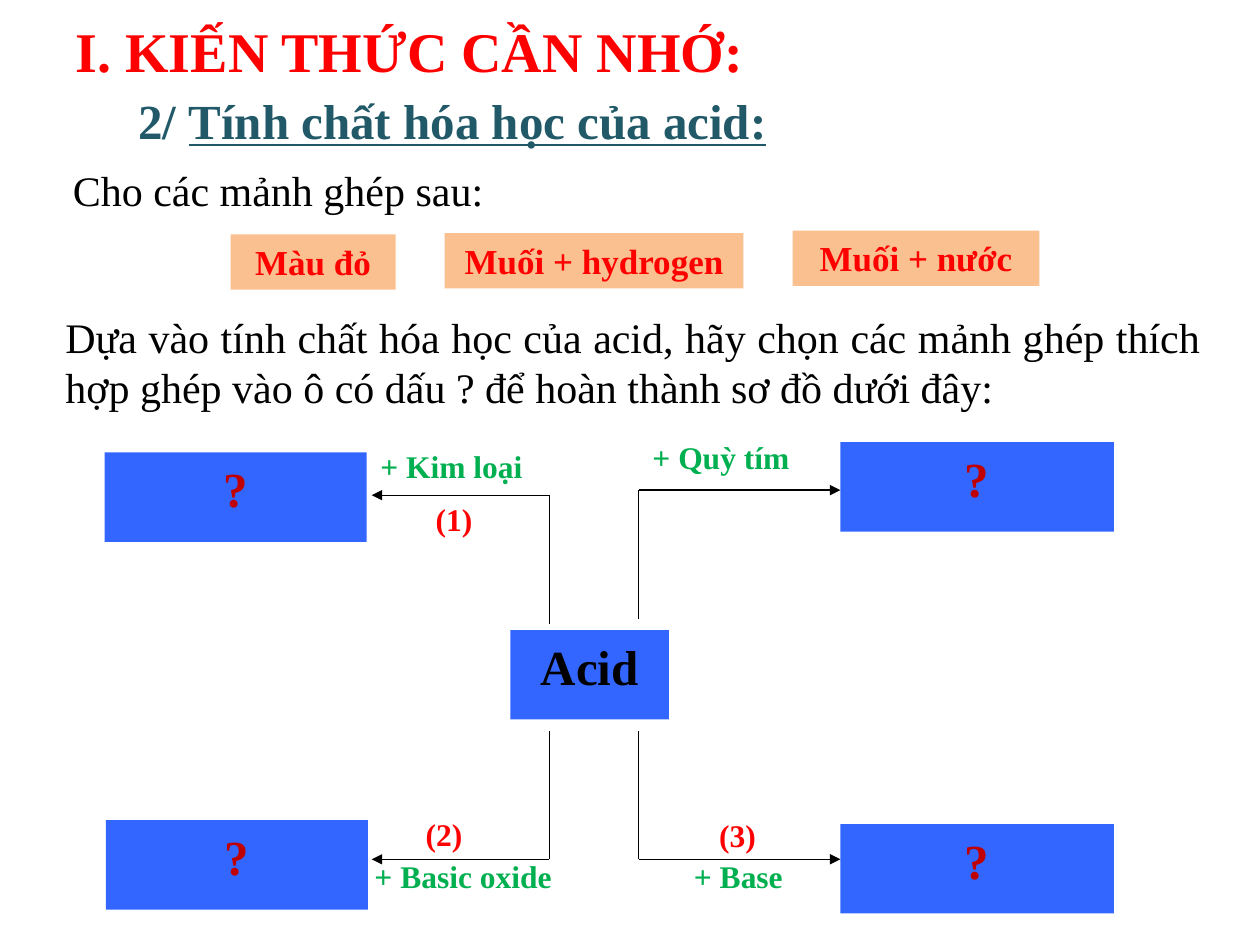
from lxml import etree
from pptx import Presentation
from pptx.dml.color import RGBColor
from pptx.enum.shapes import MSO_CONNECTOR, MSO_SHAPE
from pptx.enum.text import MSO_ANCHOR, MSO_AUTO_SIZE, PP_ALIGN
from pptx.oxml.ns import qn
from pptx.util import Inches, Pt

RECTANGLE = MSO_SHAPE.RECTANGLE
STRAIGHT = MSO_CONNECTOR.STRAIGHT
TOP = MSO_ANCHOR.TOP
NO_AUTOFIT = MSO_AUTO_SIZE.NONE
LEFT, CENTER, JUSTIFY = PP_ALIGN.LEFT, PP_ALIGN.CENTER, PP_ALIGN.JUSTIFY

FONT = "Times New Roman"
COLORS = {
    "red": "FF0000",
    "teal": "215968",
    "black": "000000",
    "green": "00B050",
    "dark red": "C00000",
    "peach": "FAC090",
    "blue": "3366FF",
}


def color(name):
    return RGBColor.from_string(COLORS[name])


def write(shape, spans, size, ink, bold=True, align=LEFT):
    """Fill a shape with one paragraph made of the given spans."""
    frame = shape.text_frame
    frame.word_wrap = True
    frame.auto_size = NO_AUTOFIT
    frame.vertical_anchor = TOP
    para = frame.paragraphs[0]
    para.alignment = align
    for text in spans:
        span = para.add_run()
        span.text = text
        span.font.name = FONT
        span.font.size = Pt(size)
        span.font.bold = bold
        span.font.color.rgb = color(ink)
    return para


def add_text(page, box, spans, size, ink, **style):
    shape = page.shapes.add_textbox(*map(Inches, box))
    return write(shape, spans, size, ink, **style)


def add_block(page, box, text, size, ink, fill):
    block = page.shapes.add_shape(RECTANGLE, *map(Inches, box))
    block.shadow.inherit = False
    block.fill.solid()
    block.fill.fore_color.rgb = color(fill)
    block.line.fill.background()
    write(block, [text], size, ink, align=CENTER)


def add_line(page, start, end, arrow=False):
    line = page.shapes.add_connector(STRAIGHT, *map(Inches, start + end))
    line.line.color.rgb = color("black")
    line.line.width = Pt(0.75)
    if arrow:
        outline = line.line._get_or_add_ln()
        etree.SubElement(outline, qn("a:tailEnd"), type="triangle")
    etree.SubElement(line._element.spPr, qn("a:effectLst"))


def add_headings(page, left, top):
    title = page.shapes.title
    title.left, title.top = Inches(left), Inches(top)
    title.width, title.height = Inches(6.5), Inches(0.64)
    write(title, ["I. KIẾN THỨC CẦN NHỚ:"], 32, "red")
    subtitle = add_text(page, (left + 0.5, top + 0.59, 6.17, 0.57),
                        ["2/ ", "Tính chất hóa học của acid:"], 28, "teal")
    subtitle.runs[1].font.underline = True


def add_task(page, left, top):
    """Place the instructions and the answer pieces to choose from."""
    paragraphs = [
        (0.06, 0, 3.49, 0.5, "Cho các mảnh ghép sau:"),
        (0, 1.16, 9.21, 0.91,
         "Dựa vào tính chất hóa học của acid, hãy chọn các mảnh ghép thích "
         "hợp ghép vào ô có dấu ? để hoàn thành sơ đồ dưới đây:"),
    ]
    for x, y, width, height, text in paragraphs:
        add_text(page, (left + x, top + y, width, height), [text], 24,
                 "black", bold=False, align=JUSTIFY)

    pieces = [
        (1.41, 0.6, 1.31, "Màu đỏ"),
        (3.11, 0.59, 2.37, "Muối + hydrogen"),
        (5.87, 0.57, 1.96, "Muối + nước"),
    ]
    for x, y, width, text in pieces:
        add_block(page, (left + x, top + y, width, 0.44), text, 20, "red",
                  "peach")


def add_diagram(page, left, top):
    """Place the acid block, its four branches and their labels."""
    blocks = [
        (3.22, 1.49, 1.26, "Acid", "black"),
        (0, 0.08, 2.08, "?", "dark red"),
        (5.84, 0, 2.17, "?", "dark red"),
        (0.01, 3, 2.08, "?", "dark red"),
        (5.84, 3.03, 2.17, "?", "dark red"),
    ]
    for x, y, width, text, ink in blocks:
        add_block(page, (left + x, top + y, width, 0.71), text, 28, ink,
                  "blue")

    # Each branch: stem x, stem start y, corner y, arrow tip x
    branches = [
        (3.53, 1.44, 0.42, 2.12),
        (4.24, 1.4, 0.38, 5.84),
        (3.53, 2.29, 3.31, 2.12),
        (4.24, 2.29, 3.31, 5.84),
    ]
    for stem, start, corner, tip in branches:
        bend = (left + stem, top + corner)
        add_line(page, (left + stem, top + start), bend)
        add_line(page, bend, (left + tip, top + corner), arrow=True)

    labels = [
        (2.53, 0.41, 0.55, "(1)", "red", LEFT),
        (2.45, 2.91, 0.55, "(2)", "red", LEFT),
        (4.78, 2.92, 0.55, "(3)", "red", LEFT),
        (4.25, -0.08, 1.49, "+ Quỳ tím", "green", LEFT),
        (2.09, -0.01, 1.65, "+ Kim loại", "green", LEFT),
        (2.02, 3.24, 1.65, "+ Basic oxide", "green", CENTER),
        (4.56, 3.24, 0.94, "+ Base", "green", CENTER),
    ]
    for x, y, width, text, ink, align in labels:
        add_text(page, (left + x, top + y, width, 0.4), [text], 18, ink,
                 align=align)


def main():
    deck = Presentation()
    deck.slide_width, deck.slide_height = Inches(10), Inches(7.5)
    title_only = deck.slide_layouts[5]
    page = deck.slides.add_slide(title_only)
    add_headings(page, 0.5, 0.08)
    add_task(page, 0.42, 1.26)
    add_diagram(page, 0.83, 3.51)
    deck.save("out.pptx")


if __name__ == "__main__":
    main()
